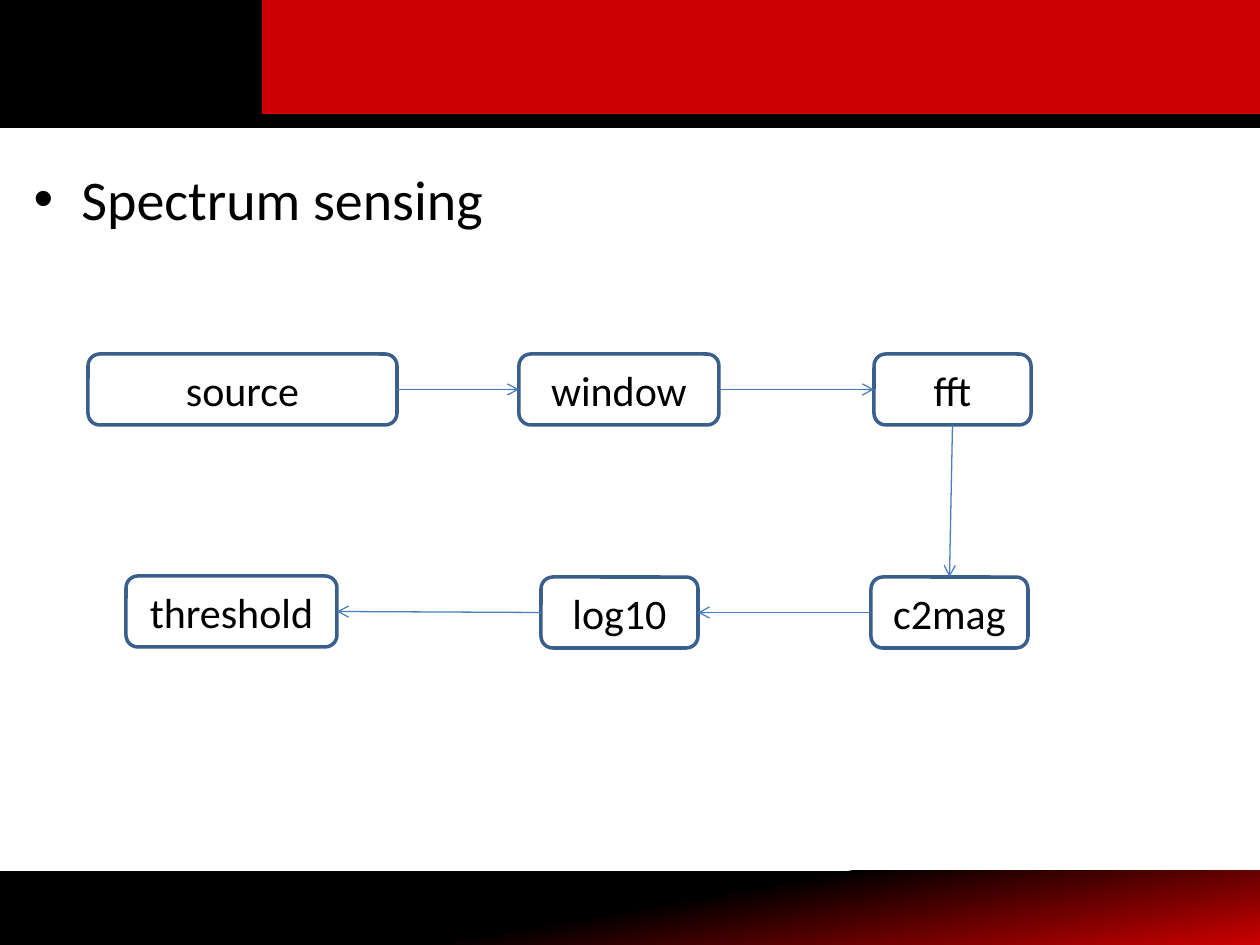
"""Build the spectrum sensing flow slide."""
from typing import NamedTuple

from lxml import etree
from pptx import Presentation
from pptx import util as u
from pptx.dml.color import RGBColor
from pptx.enum import shapes, text
from pptx.oxml import ns

EMU_PER_PX = 914400 / 126
COLORS = {"black": "000000", "red": "CC0000", "outline": "3A5F8C", "arrow": "4B7EBC"}
TOP, LEFT, BOTTOM, RIGHT = range(4)
BOX_HEIGHT = 71


class Block(NamedTuple):
    label: str
    left: int
    top: int
    width: int


class Link(NamedTuple):
    start: str
    start_side: int
    end: str
    end_side: int


BLOCKS = [
    Block("source", 88, 354, 309),
    Block("window", 519, 354, 200),
    Block("fft", 874, 354, 157),
    Block("c2mag", 871, 577, 157),
    Block("log10", 541, 577, 157),
    Block("threshold", 126, 576, 211),
]
LINKS = [
    Link("source", RIGHT, "window", LEFT),
    Link("window", RIGHT, "fft", LEFT),
    Link("fft", BOTTOM, "c2mag", TOP),
    Link("c2mag", LEFT, "log10", RIGHT),
    Link("log10", LEFT, "threshold", RIGHT),
]


def px(length: int) -> int:
    return round(length * EMU_PER_PX)


def color(name: str) -> RGBColor:
    return RGBColor.from_string(COLORS[name])


def apply(target, formats: dict) -> None:
    for key, value in formats.items():
        setattr(target, key, value)


def format_font(font, size: int) -> None:
    apply(font, {"name": "Calibri", "size": u.Pt(size)})
    font.color.rgb = color("black")


def add_band(slide, left: int, top: int, width: int, height: int, fill: str):
    band = slide.shapes.add_shape(
        shapes.MSO_SHAPE.RECTANGLE, px(left), px(top), px(width), px(height))
    band.shadow.inherit = False
    band.fill.solid()
    band.fill.fore_color.rgb = color(fill)
    band.line.fill.background()
    return band


def add_footer(slide) -> None:
    footer = add_band(slide, 0, 871, 1260, 74, "black")
    footer.fill.gradient()
    footer.fill.gradient_angle = 280
    for stop, position, name in zip(
            footer.fill.gradient_stops, (0.5, 1), ("black", "red")):
        stop.position = position
        stop.color.rgb = color(name)


def add_header(slide) -> None:
    header = add_band(slide, 0, 0, 1260, 126, "black")
    header.line.color.rgb = color("black")
    header.line.width = u.Pt(2)
    add_band(slide, 262, -1, 998, 115, "red")


def fill_body(body) -> None:
    apply(body, {"left": px(21), "top": px(158), "width": px(1218), "height": px(687)})
    heading = body.text_frame.paragraphs[0]
    heading.text = "Spectrum sensing"
    properties = heading._p.get_or_add_pPr()
    properties.set("marL", str(u.Inches(0.38)))
    properties.set("indent", str(u.Inches(-0.38)))
    etree.SubElement(properties, ns.qn("a:buChar"), char="•")
    heading.space_before = u.Pt(0)
    format_font(heading.runs[0].font, 32)


def add_block(slide, block: Block):
    box = slide.shapes.add_shape(
        shapes.MSO_SHAPE.ROUNDED_RECTANGLE,
        px(block.left), px(block.top), px(block.width), px(BOX_HEIGHT))
    box.shadow.inherit = False
    box.fill.background()
    box.line.color.rgb = color("outline")
    box.line.width = u.Pt(2)
    apply(box.text_frame, {"word_wrap": True, "vertical_anchor": text.MSO_ANCHOR.MIDDLE})
    label = box.text_frame.paragraphs[0]
    apply(label, {"text": block.label, "alignment": text.PP_ALIGN.CENTER})
    format_font(label.runs[0].font, 24)
    return box


def add_link(slide, boxes: dict, link: Link) -> None:
    arrow = slide.shapes.add_connector(shapes.MSO_CONNECTOR.STRAIGHT, 0, 0, 0, 0)
    arrow.begin_connect(boxes[link.start], link.start_side)
    arrow.end_connect(boxes[link.end], link.end_side)
    arrow.line.color.rgb = color("arrow")
    arrow.line.width = u.Pt(0.75)
    etree.SubElement(arrow.line._get_or_add_ln(), ns.qn("a:tailEnd"), type="arrow")
    etree.SubElement(arrow._element.spPr, ns.qn("a:effectLst"))


def main() -> None:
    deck = Presentation()
    apply(deck, {"slide_width": px(1260), "slide_height": px(945)})
    slide = deck.slides.add_slide(deck.slide_layouts[1])
    title = slide.shapes.title._element
    title.getparent().remove(title)
    add_footer(slide)
    add_header(slide)
    fill_body(slide.placeholders[1])
    boxes = {block.label: add_block(slide, block) for block in BLOCKS}
    for link in LINKS:
        add_link(slide, boxes, link)
    deck.save("out.pptx")


if __name__ == "__main__":
    main()
